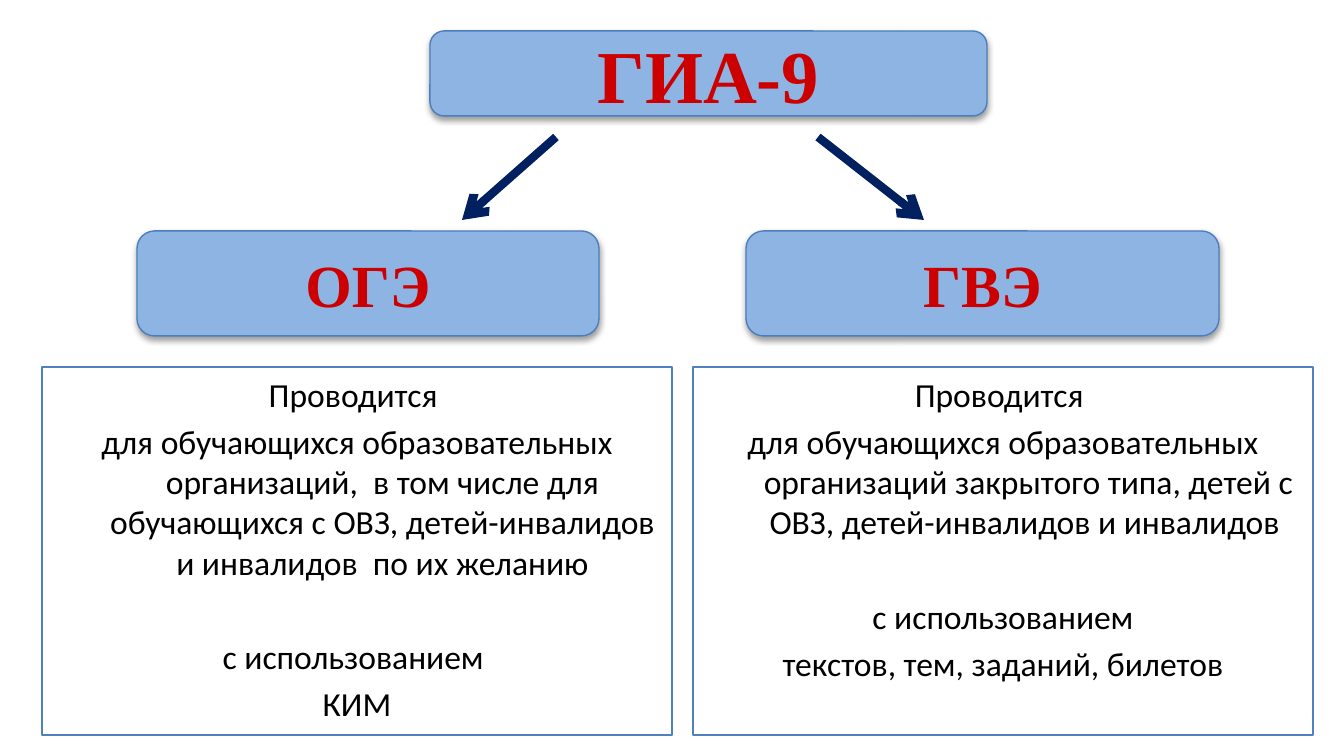
from dataclasses import dataclass

from lxml import etree
from pptx import Presentation
from pptx.dml.color import RGBColor
from pptx.enum.shapes import MSO_CONNECTOR, MSO_SHAPE
from pptx.enum.text import MSO_ANCHOR, MSO_AUTO_SIZE, PP_ALIGN
from pptx.oxml.ns import qn
from pptx.util import Emu, Pt

ROUNDED = MSO_SHAPE.ROUNDED_RECTANGLE
STRAIGHT = MSO_CONNECTOR.STRAIGHT
TOP, MIDDLE = MSO_ANCHOR.TOP, MSO_ANCHOR.MIDDLE
CENTER = PP_ALIGN.CENTER
FIXED = MSO_AUTO_SIZE.NONE
TWO_CONTENT = 3
EMU_PER_PX = 914400 / 134.4


@dataclass(frozen=True)
class Theme:
    box_fill: str = "8EB4E3"
    box_line: str = "4B7EBC"
    body_line: str = "4F81BD"
    arrow: str = "002060"
    heading: str = "CC0000"
    text: str = "000000"
    heading_font: str = "Times New Roman"
    body_font: str = "Calibri"
    title_size: int = 40
    branch_size: int = 32
    body_size: int = 18
    thin: float = 0.75
    thick: float = 4.5


def px(value):
    return Emu(round(value * EMU_PER_PX))


def add_xml(parent, tag, **attributes):
    return etree.SubElement(parent, qn(tag), {k: str(v) for k, v in attributes.items()})


class SlideBuilder:
    def __init__(self, page, theme):
        self.page = page
        self.theme = theme

    def outline(self, shape, color, width):
        shape.line.color.rgb = RGBColor.from_string(color)
        shape.line.width = Pt(width)

    def format_span(self, span, name, size, color, bold=False):
        for key, value in {"name": name, "size": Pt(size), "bold": bold}.items():
            setattr(span.font, key, value)
        span.font.color.rgb = RGBColor.from_string(color)

    def heading_box(self, text, left, top, width, height, size):
        theme = self.theme
        box = self.page.shapes.add_shape(ROUNDED, px(left), px(top), px(width), px(height))
        box.fill.solid()
        box.fill.fore_color.rgb = RGBColor.from_string(theme.box_fill)
        self.outline(box, theme.box_line, theme.thin)
        self.soft_shadow(box)
        box.text_frame.vertical_anchor = MIDDLE
        para = box.text_frame.paragraphs[0]
        para.alignment = CENTER
        span = para.add_run()
        span.text = text
        self.format_span(span, theme.heading_font, size, theme.heading, bold=True)

    def soft_shadow(self, shape):
        shape.shadow.inherit = False
        effects = shape._element.spPr.find(qn("a:effectLst"))
        shadow = add_xml(effects, "a:outerShdw", blurRad=Pt(3.1), dist=Pt(1.6),
                         dir=5400000, rotWithShape=0)
        color = add_xml(shadow, "a:srgbClr", val="000000")
        add_xml(color, "a:alpha", val=38000)

    def arrow(self, start, end):
        points = [px(value) for value in (*start, *end)]
        line = self.page.shapes.add_connector(STRAIGHT, *points)
        self.outline(line, self.theme.arrow, self.theme.thick)
        add_xml(line.line._get_or_add_ln(), "a:tailEnd", type="arrow")
        add_xml(line._element.spPr, "a:effectLst")

    def body(self, index, paragraphs, left, top, width, height):
        """Fill a body placeholder; paragraphs are (text, points before) pairs."""
        theme = self.theme
        box = self.page.placeholders[index]
        place = {"left": left, "top": top, "width": width, "height": height}
        for key, value in place.items():
            setattr(box, key, px(value))
        self.outline(box, theme.body_line, theme.thin)
        frame = box.text_frame
        for key, value in {"word_wrap": True, "auto_size": FIXED, "vertical_anchor": TOP}.items():
            setattr(frame, key, value)
        for number, (text, before) in enumerate(paragraphs):
            para = frame.add_paragraph() if number else frame.paragraphs[0]
            para.alignment = CENTER
            para.space_before = Pt(before)
            span = para.add_run()
            span.text = text
            self.format_span(span, theme.body_font, theme.body_size, theme.text)
            properties = para._p.get_or_add_pPr()
            properties.set("marL", str(px(51)))
            properties.set("indent", str(px(-51)))
            add_xml(properties, "a:buNone")


def main():
    deck = Presentation()
    deck.slide_width, deck.slide_height = px(1344), px(756)
    page = deck.slides.add_slide(deck.slide_layouts[TWO_CONTENT])
    title = page.shapes.title._element
    title.getparent().remove(title)
    theme = Theme()
    builder = SlideBuilder(page, theme)

    near, apart = 3.6, 29
    builder.body(1, [
        ("Проводится ", near),
        ("для обучающихся образовательных организаций,  в том числе для "
         "обучающихся с ОВЗ, детей-инвалидов и инвалидов  по их желанию", near),
        ("с использованием ", apart),
        ("КИМ", near),
    ], 42, 367, 630, 368)
    builder.body(2, [
        ("Проводится ", near),
        ("для обучающихся образовательных организаций закрытого типа, "
         "детей с ОВЗ, детей-инвалидов и инвалидов ", near),
        (" с использованием ", apart),
        ("текстов, тем, заданий, билетов", near),
    ], 693, 367, 620, 368)

    builder.arrow((818, 137), (924, 220))
    builder.arrow((556, 137), (462, 220))

    builder.heading_box("ГИА-9", 430, 31, 557, 85, theme.title_size)
    builder.heading_box("ОГЭ", 137, 231, 462, 105, theme.branch_size)
    builder.heading_box("ГВЭ", 746, 231, 473, 105, theme.branch_size)
    deck.save("out.pptx")


if __name__ == "__main__":
    main()
